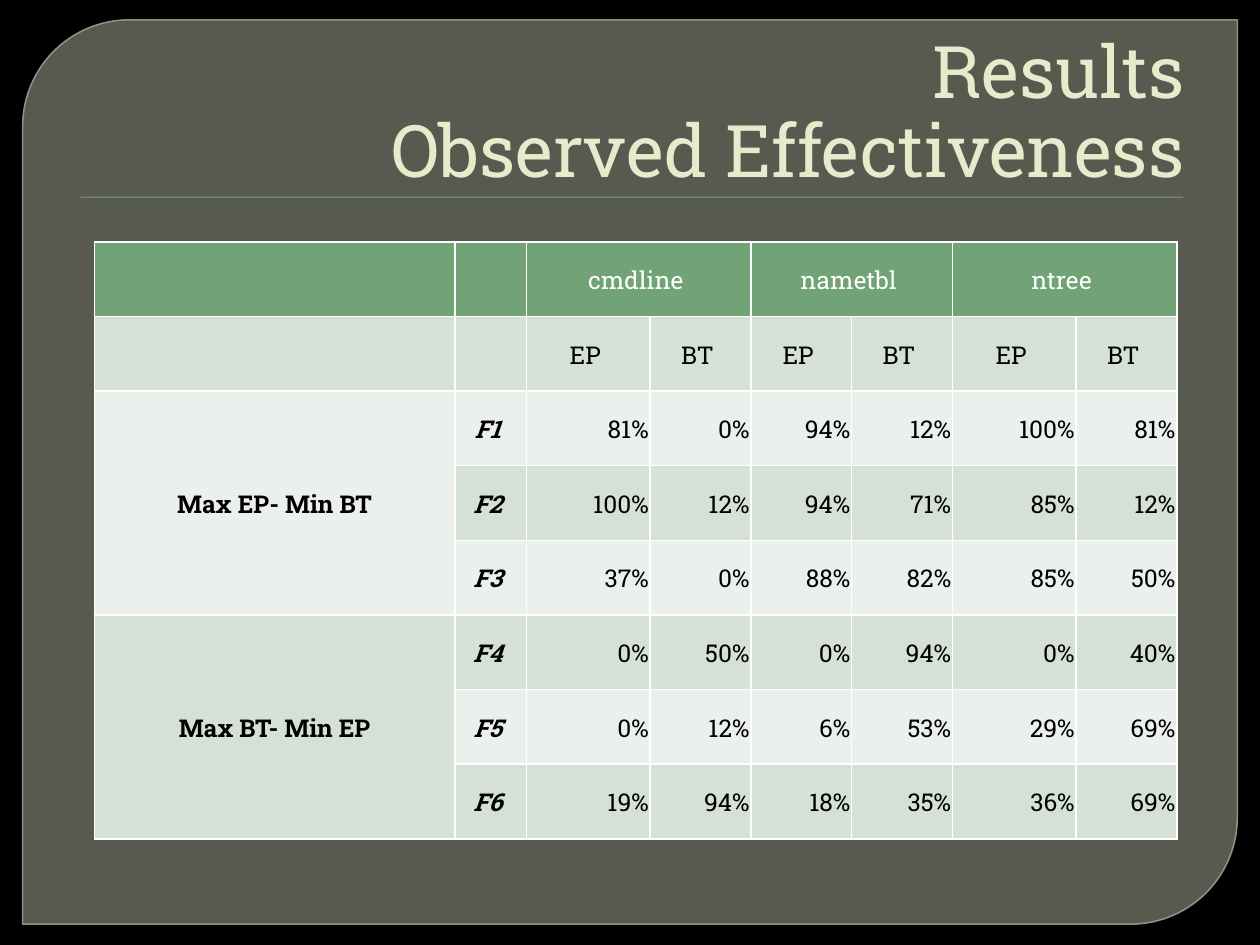
import dataclasses
import typing

import lxml.etree
import pptx
import pptx.dml.color
import pptx.enum.shapes
import pptx.enum.text
import pptx.oxml.ns
import pptx.util

WIDTH, HEIGHT = 10, 7.5
FONT = "Roboto Slab"
GREEN, WHITE, BLACK = "72A376", "FFFFFF", "000000"
BANDS = ("EBF0EC", "D5E0D6")
ALIGN = pptx.enum.text.PP_ALIGN
SHAPES = pptx.enum.shapes.MSO_SHAPE
qn = pptx.oxml.ns.qn

PROGRAMS = ("cmdline", "nametbl", "ntree")
MEASURES = ("EP", "BT")
GOALS = ("Max EP- Min BT", "Max BT- Min EP")
FAULTS_PER_GOAL = 3
FIRST_FAULT_ROW, FIRST_VALUE_COLUMN = 2, 2
VALUES = (
    (81, 0, 94, 12, 100, 81),
    (100, 12, 94, 71, 85, 12),
    (37, 0, 88, 82, 85, 50),
    (0, 50, 0, 94, 0, 40),
    (0, 12, 6, 53, 29, 69),
    (19, 94, 18, 35, 36, 69),
)
COLUMN_WIDTHS = (2.86, 0.57, 0.98, 0.8, 0.8, 0.8, 0.98, 0.8)
ROW_HEIGHT = 4.74 / (FIRST_FAULT_ROW + len(VALUES))


@dataclasses.dataclass
class Box:
    """A frame given as shares of the slide's size."""
    left: float
    top: float
    width: float
    height: float

    def lengths(self) -> list[int]:
        shares = (self.left, self.top, self.width, self.height)
        return [pptx.util.Inches(share * side)
                for share, side in zip(shares, (WIDTH, HEIGHT) * 2)]


@dataclasses.dataclass
class Label:
    row: int
    column: int
    text: str
    rows: int = 1
    columns: int = 1
    align: typing.Any = ALIGN.CENTER
    color: str = BLACK
    bold: bool = False
    italic: bool = False


def rgb(value: str) -> pptx.dml.color.RGBColor:
    return pptx.dml.color.RGBColor.from_string(value)


def apply(target: typing.Any, formats: dict[str, typing.Any]) -> None:
    for name, value in formats.items():
        setattr(target, name, value)


def fill_solid(target: typing.Any, color: str, opacity: int = 100) -> None:
    """Fill a shape, line, cell or background; opacity is a percentage."""
    target.fill.solid()
    target.fill.fore_color.rgb = rgb(color)
    if opacity < 100:
        for node in target.fill._xPr.iter(qn("a:srgbClr")):
            lxml.etree.SubElement(node, qn("a:alpha"), val=str(opacity * 1000))


def add_panel(page: typing.Any) -> None:
    box = Box(0.018, 0.021, 0.964, 0.957)
    panel = page.shapes.add_shape(SHAPES.ROUND_2_DIAG_RECTANGLE, *box.lengths())
    panel.adjustments[0], panel.adjustments[1] = 0.118, 0
    panel.shadow.inherit = False
    fill_solid(panel, "888B7B", 65)
    panel.line.width = pptx.util.Pt(0.87)
    fill_solid(panel.line, "9DA090", 88)


def add_rule(page: typing.Any) -> None:
    box = Box(0.064, 0.208, 0.875, 0.0013)
    rule = page.shapes.add_shape(SHAPES.RECTANGLE, *box.lengths())
    rule.shadow.inherit = False
    fill_solid(rule, GREEN)
    rule.line.fill.background()


def format_title(page: typing.Any, lines: tuple[str, ...]) -> None:
    title = page.shapes.title
    page.shapes._spTree.append(title._element)
    apply(title, dict(zip(("left", "top", "width", "height"),
                          Box(0.05, 0.037, 0.9, 0.167).lengths())))
    apply(title.text_frame, {
        "word_wrap": True, "margin_bottom": 0,
        "auto_size": pptx.enum.text.MSO_AUTO_SIZE.NONE,
        "vertical_anchor": pptx.enum.text.MSO_ANCHOR.BOTTOM})
    para = title.text_frame.paragraphs[0]
    apply(para, {"alignment": ALIGN.RIGHT, "line_spacing": 0.9})
    for index, line in enumerate(lines):
        if index:
            para.add_line_break()
        span = para.add_run()
        span.text = line
        apply(span.font, {"name": FONT, "size": pptx.util.Pt(41.4)})
        span.font.color.rgb = rgb("E7EACB")


def format_cell(cell: typing.Any, color: str) -> None:
    """Give a cell thin white borders, a fill and narrow margins."""
    properties = cell._tc.get_or_add_tcPr()
    for side in ("lnL", "lnR", "lnT", "lnB"):
        border = lxml.etree.SubElement(properties, qn(f"a:{side}"),
                                       w=str(pptx.util.Pt(1)))
        paint = lxml.etree.SubElement(border, qn("a:solidFill"))
        lxml.etree.SubElement(paint, qn("a:srgbClr"), val=WHITE)
    fill_solid(cell, color)
    margin = pptx.util.Inches(0.01)
    apply(cell, {"margin_left": margin, "margin_right": margin,
                 "margin_top": margin, "margin_bottom": 0,
                 "vertical_anchor": pptx.enum.text.MSO_ANCHOR.MIDDLE})


def write_label(table: typing.Any, label: Label) -> None:
    cell = table.cell(label.row, label.column)
    if label.rows * label.columns > 1:
        cell.merge(table.cell(label.row + label.rows - 1,
                              label.column + label.columns - 1))
    para = cell.text_frame.paragraphs[0]
    para.alignment = label.align
    span = para.add_run()
    span.text = label.text
    apply(span.font, {"name": FONT, "size": pptx.util.Pt(14),
                      "bold": label.bold, "italic": label.italic})
    span.font.color.rgb = rgb(label.color)


def table_labels() -> typing.Iterator[Label]:
    pair = len(MEASURES)
    for index, program in enumerate(PROGRAMS):
        column = FIRST_VALUE_COLUMN + index * pair
        yield Label(0, column, f"{program} ", columns=pair, color=WHITE)
        for offset, measure in enumerate(MEASURES):
            yield Label(1, column + offset, f"{measure} ")
    for index, goal in enumerate(GOALS):
        yield Label(FIRST_FAULT_ROW + index * FAULTS_PER_GOAL, 0, goal,
                    rows=FAULTS_PER_GOAL, bold=True)
    for index, values in enumerate(VALUES):
        row = FIRST_FAULT_ROW + index
        yield Label(row, 1, f"F{index + 1} ", bold=True, italic=True)
        for column, value in enumerate(values, FIRST_VALUE_COLUMN):
            yield Label(row, column, f"{value}%", align=ALIGN.RIGHT)


def add_results(page: typing.Any) -> None:
    box = Box(0.075, 0.256, 0.86, 0.632)
    row_count = FIRST_FAULT_ROW + len(VALUES)
    table = page.shapes.add_table(row_count, len(COLUMN_WIDTHS),
                                  *box.lengths()).table
    for column, width in zip(table.columns, COLUMN_WIDTHS):
        column.width = pptx.util.Inches(width)
    for index, row in enumerate(table.rows):
        row.height = pptx.util.Inches(ROW_HEIGHT)
        for cell in row.cells:
            format_cell(cell, BANDS[index % 2] if index else GREEN)
    for label in table_labels():
        write_label(table, label)


def main() -> None:
    deck = pptx.Presentation()
    apply(deck, {"slide_width": pptx.util.Inches(WIDTH),
                 "slide_height": pptx.util.Inches(HEIGHT)})
    page = deck.slides.add_slide(deck.slide_layouts.get_by_name("Title Only"))
    fill_solid(page.background, BLACK)
    add_panel(page)
    add_rule(page)
    format_title(page, ("Results", "Observed Effectiveness"))
    add_results(page)
    deck.save("out.pptx")


if __name__ == "__main__":
    main()
